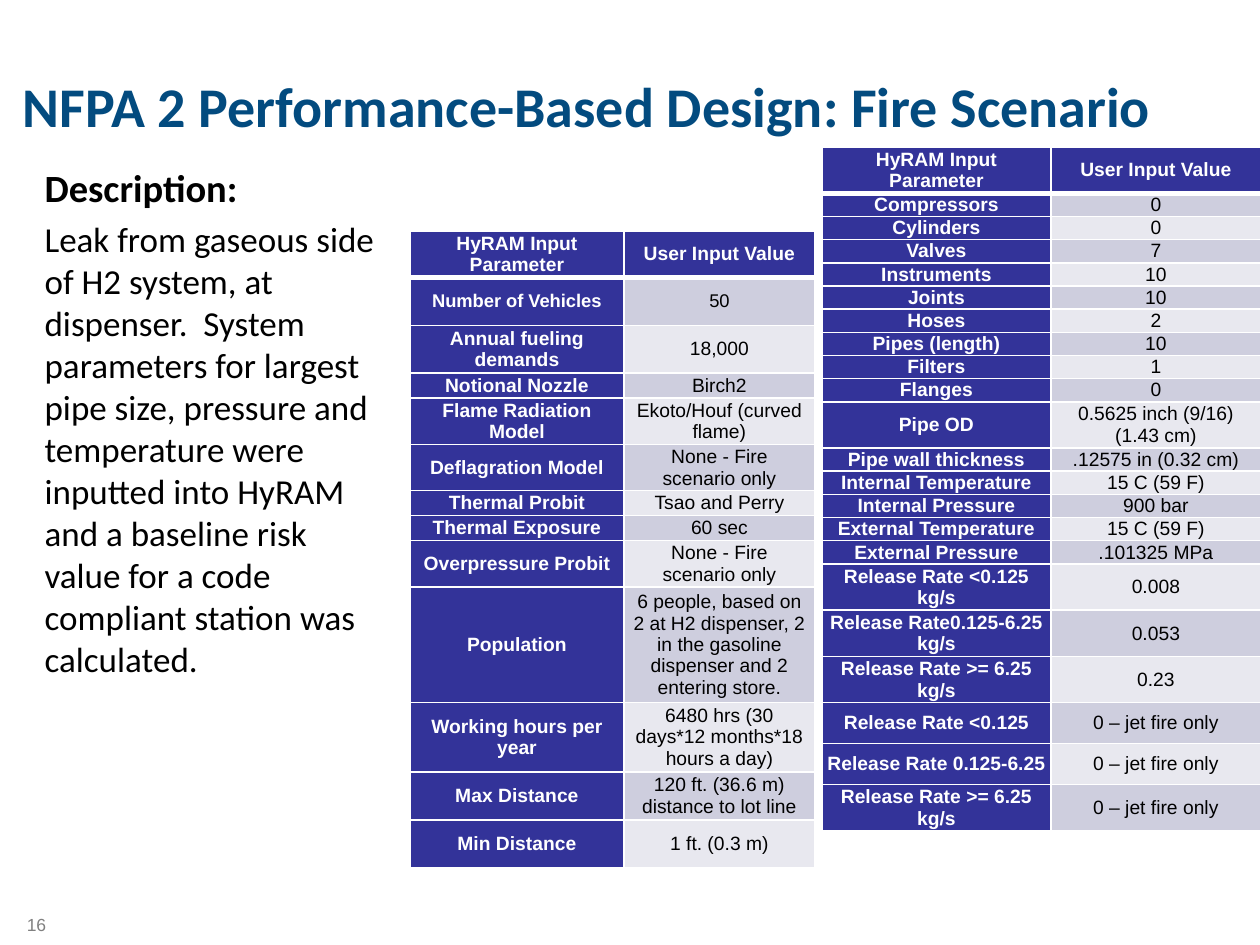
from dataclasses import dataclass

from lxml import etree
from pptx import Presentation
from pptx.dml.color import RGBColor
from pptx.enum import text
from pptx.oxml import ns
from pptx.util import Emu, Pt


@dataclass(frozen=True)
class Theme:
    heading_font: str = "Calibri"
    table_font: str = "Arial"
    title: str = "034B7F"
    ink: str = "000000"
    paper: str = "FFFFFF"
    grey: str = "808080"
    label_fill: str = "333399"
    bands: tuple = ("E8E8EF", "CECEDE")
    title_size: float = 32
    lead_size: float = 22
    body_size: float = 20
    cell_size: float = 11
    small_cell_size: float = 10.5
    number_size: float = 10
    rule: float = 1
    header_rule: float = 3


THEME = Theme()
EMU_PER_PX = 914400 / 126
HEADER = ("HyRAM Input Parameter", "User Input Value")
WIDE, NARROW = 9, 4  # side margins of table cells, px

# Parameter, value, row height in px
STATION_ROWS = [
    (*HEADER, 25),
    ("Number of Vehicles", "50", 48),
    ("Annual fueling demands", "18,000", 48),
    ("Notional Nozzle", "Birch2", 25),
    ("Flame Radiation Model", "Ekoto/Houf (curved flame)", 25),
    ("Deflagration Model", "None - Fire scenario only", 25),
    ("Thermal Probit", "Tsao and Perry", 25),
    ("Thermal Exposure", "60 sec", 25),
    ("Overpressure Probit", "None - Fire scenario only", 25),
    ("Population", "6 people, based on 2 at H2 dispenser, 2 in the gasoline "
     "dispenser and 2 entering store.", 72),
    ("Working hours per year", "6480 hrs (30 days*12 months*18 hours a day)", 48),
    ("Max Distance", "120 ft. (36.6 m) distance to lot line", 48),
    ("Min Distance", "1 ft. (0.3 m)", 48),
]
TIGHT_ROWS = {"Number of Vehicles", "Max Distance", "Min Distance"}

SYSTEM_ROWS = [
    (*HEADER, 41),
    ("Compressors", "0", 23),
    ("Cylinders", "0", 23),
    ("Valves", "7", 22),
    ("Instruments", "10", 23),
    ("Joints", "10", 23),
    ("Hoses", "2", 22),
    ("Pipes (length)", "10", 23),
    ("Filters", "1", 23),
    ("Flanges", "0", 22),
    ("Pipe OD", "0.5625 inch (9/16) (1.43 cm)", 41),
    ("Pipe wall thickness", ".12575 in (0.32 cm)", 23),
    ("Internal Temperature", "15 C (59 F)", 23),
    ("Internal Pressure", "900 bar", 22),
    ("External Temperature", "15 C (59 F)", 23),
    ("External Pressure", ".101325 MPa", 23),
    ("Release Rate <0.125 kg/s", "0.008", 41),
    ("Release Rate0.125-6.25 kg/s", "0.053", 41),
    ("Release Rate >= 6.25 kg/s", "0.23", 41),
    ("Release Rate <0.125", "0 – jet fire only", 41),
    ("Release Rate 0.125-6.25", "0 – jet fire only", 41),
    ("Release Rate >= 6.25 kg/s", "0 – jet fire only", 41),
]


def px(length):
    return Emu(round(length * EMU_PER_PX))


def place(shape, left, top, width, height):
    shape.left, shape.top = px(left), px(top)
    shape.width, shape.height = px(width), px(height)


def add_run(paragraph, words, font, size, color, bold=False):
    run = paragraph.add_run()
    run.text = words
    run.font.name = font
    run.font.size = Pt(size)
    run.font.bold = bold
    run.font.color.rgb = RGBColor.from_string(color)


def add_title(slide):
    title = slide.shapes.title
    place(title, 10, 63, 1176, 108)
    frame = title.text_frame
    frame.auto_size = text.MSO_AUTO_SIZE.NONE
    frame.vertical_anchor = text.MSO_ANCHOR.TOP
    frame.margin_top = px(9)
    paragraph = frame.paragraphs[0]
    paragraph.alignment = text.PP_ALIGN.LEFT
    add_run(paragraph, "NFPA 2 Performance-Based Design: Fire Scenario",
            THEME.heading_font, THEME.title_size, THEME.title, True)


def add_description(slide):
    description = slide.placeholders[1]
    place(description, 32, 158, 357, 598)
    frame = description.text_frame
    frame.auto_size = text.MSO_AUTO_SIZE.NONE
    lead, body = frame.paragraphs[0], frame.add_paragraph()
    for paragraph, space in ((lead, 0), (body, 4)):
        properties = paragraph._p.get_or_add_pPr()
        properties.set("marL", "0")
        properties.set("indent", "0")
        etree.SubElement(properties, ns.qn("a:buNone"))
        paragraph.space_before = Pt(space)
    add_run(lead, "Description:", THEME.heading_font, THEME.lead_size, THEME.ink, True)
    add_run(body, "Leak from gaseous side of H2 system, at dispenser.  System "
            "parameters for largest pipe size, pressure and temperature were "
            "inputted into HyRAM and a baseline risk value for a code compliant "
            "station was calculated.",
            THEME.heading_font, THEME.body_size, THEME.ink)


def add_borders(cell, top, bottom):
    properties = cell._tc.get_or_add_tcPr()
    widths = {"lnL": THEME.rule, "lnR": THEME.rule, "lnT": top, "lnB": bottom}
    for side, width in widths.items():
        line = etree.SubElement(properties, ns.qn(f"a:{side}"), w=str(Pt(width)))
        fill = etree.SubElement(line, ns.qn("a:solidFill"))
        etree.SubElement(fill, ns.qn("a:srgbClr"), val=THEME.paper)


def fill_cell(cell, words, row, is_label, margin, size):
    # Borders come before the fill in the cell properties
    add_borders(cell, THEME.header_rule if row == 1 else THEME.rule,
                THEME.header_rule if row == 0 else THEME.rule)
    cell.fill.solid()
    cell.fill.fore_color.rgb = RGBColor.from_string(
        THEME.label_fill if is_label else THEME.bands[row % 2])
    cell.margin_left = cell.margin_right = px(margin)
    cell.margin_top = cell.margin_bottom = 0
    cell.vertical_anchor = text.MSO_ANCHOR.MIDDLE
    paragraph = cell.text_frame.paragraphs[0]
    paragraph.alignment = text.PP_ALIGN.CENTER
    add_run(paragraph, words, THEME.table_font, size,
            THEME.paper if is_label else THEME.ink, is_label)


def add_parameters(slide, left, top, widths, rows, margin, tight=()):
    height = sum(row[-1] for row in rows)
    table = slide.shapes.add_table(len(rows), len(widths), px(left), px(top),
                                   px(sum(widths)), px(height)).table
    table.horz_banding = False
    for column, width in zip(table.columns, widths):
        column.width = px(width)
    for index, (*pair, row_height) in enumerate(rows):
        table.rows[index].height = px(row_height)
        side = NARROW if pair[0] in tight else margin
        size = THEME.small_cell_size if pair[0] == "Number of Vehicles" else THEME.cell_size
        for column, words in enumerate(pair):
            fill_cell(table.cell(index, column), words, index,
                      index == 0 or column == 0, side, size)


def add_page_number(slide):
    frame = slide.shapes.add_textbox(px(0), px(908), px(73), px(32)).text_frame
    frame.word_wrap = True
    frame.vertical_anchor = text.MSO_ANCHOR.MIDDLE
    paragraph = frame.paragraphs[0]
    paragraph.alignment = text.PP_ALIGN.CENTER
    add_run(paragraph, "16", THEME.table_font, THEME.number_size, THEME.grey)


def main():
    deck = Presentation()
    deck.slide_width, deck.slide_height = px(1260), px(945)
    slide = deck.slides.add_slide(deck.slide_layouts[1])
    add_title(slide)
    add_page_number(slide)
    # Station inputs in the middle, system inputs on the right
    add_parameters(slide, 410, 231, (214, 191), STATION_ROWS, WIDE, TIGHT_ROWS)
    add_parameters(slide, 822, 147, (229, 210), SYSTEM_ROWS, NARROW)
    add_description(slide)
    deck.save("out.pptx")


if __name__ == "__main__":
    main()
